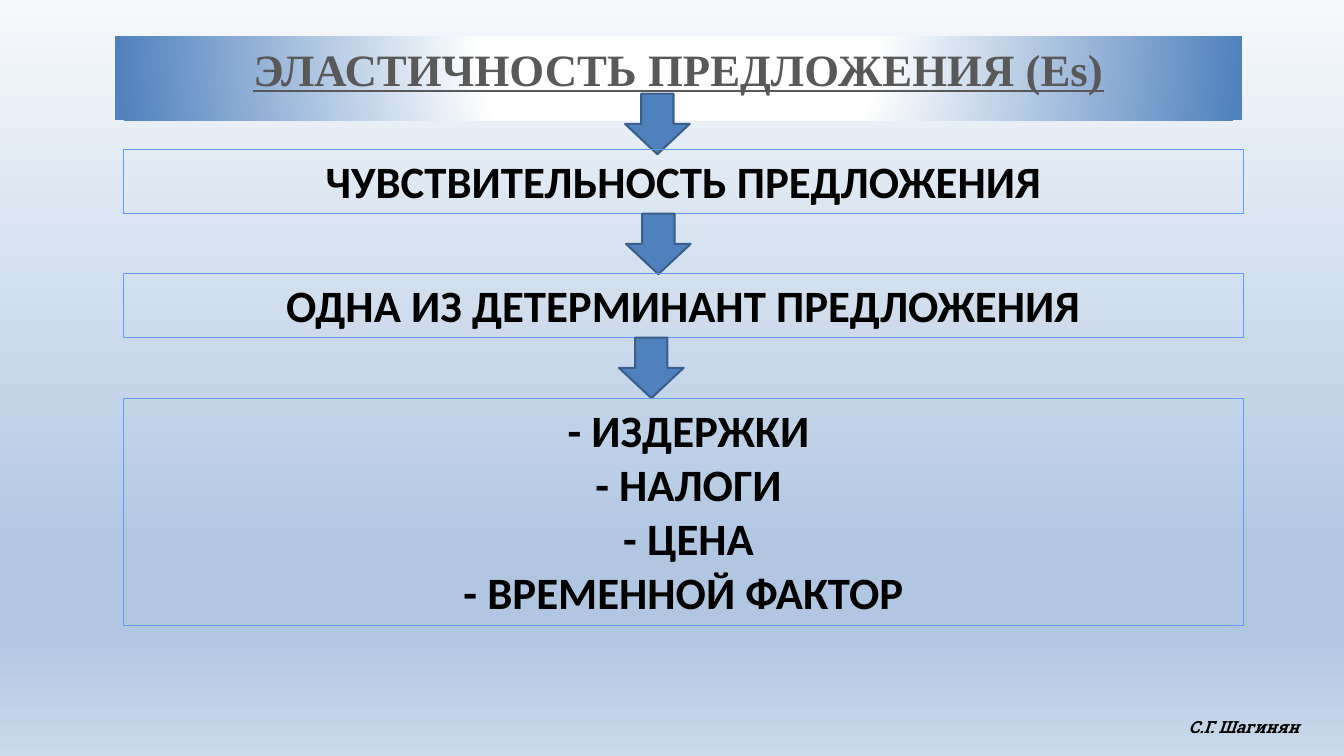
from lxml.etree import SubElement
from pptx import Presentation
from pptx.dml.color import RGBColor
from pptx.enum.shapes import MSO_SHAPE as Shape
from pptx.enum.text import MSO_ANCHOR as Anchor, MSO_AUTO_SIZE as AutoSize, PP_ALIGN as Align
from pptx.oxml.ns import qn
from pptx.util import Inches, Pt

BLACK = RGBColor(0x00, 0x00, 0x00)
GRAY = RGBColor(0x59, 0x59, 0x59)
WHITE = RGBColor(0xFF, 0xFF, 0xFF)
BLUE = RGBColor(0x4F, 0x81, 0xBD)
DARK_BLUE = RGBColor(0x3A, 0x5F, 0x8C)
BORDER_BLUE = RGBColor(0x66, 0x99, 0xFF)
SKY_TOP = RGBColor(0xF6, 0xF9, 0xFC)
SKY_MIDDLE = RGBColor(0xB0, 0xC6, 0xE1)
SKY_BOTTOM = RGBColor(0xCA, 0xD9, 0xEB)

BOX_LEFT, BOX_WIDTH = 1.23, 11.1
ARROW_WIDTH, ARROW_HEIGHT = 0.64, 0.6

# Each step: arrow left, arrow top, box top, box height, lines
STEPS = [
    (6.2, 0.93, 1.48, 0.64, ["ЧУВСТВИТЕЛЬНОСТЬ ПРЕДЛОЖЕНИЯ"]),
    (6.21, 2.12, 2.71, 0.64, ["ОДНА ИЗ ДЕТЕРМИНАНТ ПРЕДЛОЖЕНИЯ"]),
    (6.14, 3.35, 3.95, 2.26,
     [" - ИЗДЕРЖКИ", " - НАЛОГИ", " - ЦЕНА", "- ВРЕМЕННОЙ ФАКТОР"]),
]


def set_gradient(fill, parent, stops, focus=None):
    """Fill with (percent, colour) stops: top to bottom, or circular around focus (l, t, r, b)."""
    fill.gradient()
    gradient = parent.find(qn("a:gradFill"))
    for child in list(gradient):
        gradient.remove(child)
    stop_list = SubElement(gradient, qn("a:gsLst"))
    for percent, color in stops:
        stop = SubElement(stop_list, qn("a:gs"), pos=str(percent * 1000))
        SubElement(stop, qn("a:srgbClr"), val=str(color))
    if focus is None:
        SubElement(gradient, qn("a:lin"), ang=str(90 * 60000), scaled="0")
    else:
        circle = SubElement(gradient, qn("a:path"), path="circle")
        edges = {side: str(percent * 1000) for side, percent in zip("ltrb", focus)}
        SubElement(circle, qn("a:fillToRect"), **edges)


class SlideBuilder:
    font_name = "Calibri"
    font_size = 32

    def __init__(self, presentation):
        self.slide = presentation.slides.add_slide(presentation.slide_layouts[5])

    def background(self, stops):
        fill = self.slide.background.fill
        set_gradient(fill, self.slide.element.find(".//" + qn("p:bgPr")), stops)

    def set_text(self, shape, lines, color=BLACK, name=None, size=None, align=Align.CENTER,
                 wrap=True, underline=None, italic=None):
        frame = shape.text_frame
        frame.text = "\n".join(lines)
        frame.word_wrap = wrap
        frame.auto_size = AutoSize.SHAPE_TO_FIT_TEXT
        frame.vertical_anchor = Anchor.TOP
        for paragraph in frame.paragraphs:
            paragraph.alignment = align
            font = paragraph.font
            font.name = name or self.font_name
            font.size = Pt(size or self.font_size)
            font.bold = True
            font.italic = italic
            font.underline = underline
            font.color.rgb = color

    def title(self, text, left, top, width, height):
        title = self.slide.shapes.title
        title.left, title.top = Inches(left), Inches(top)
        title.width, title.height = Inches(width), Inches(height)
        set_gradient(title.fill, title.element.spPr,
                     [(0, WHITE), (35, WHITE), (100, BLUE)], focus=(50, -80, 50, 180))
        self.set_text(title, [text], color=GRAY, name="Times New Roman", underline=True)

    def shape(self, kind, left, top, width, height, line_color, line_width):
        shape = self.slide.shapes.add_shape(
            kind, Inches(left), Inches(top), Inches(width), Inches(height))
        shape.shadow.inherit = False
        shape.line.color.rgb = line_color
        shape.line.width = Pt(line_width)
        return shape

    def arrow(self, left, top):
        arrow = self.shape(Shape.DOWN_ARROW, left, top, ARROW_WIDTH, ARROW_HEIGHT, DARK_BLUE, 1.5)
        arrow.fill.solid()
        arrow.fill.fore_color.rgb = BLUE

    def box(self, top, height, lines):
        box = self.shape(Shape.RECTANGLE, BOX_LEFT, top, BOX_WIDTH, height, BORDER_BLUE, 0.75)
        box.fill.background()
        self.set_text(box, lines)

    def signature(self, text, left, top, width, height):
        label = self.slide.shapes.add_textbox(
            Inches(left), Inches(top), Inches(width), Inches(height))
        self.set_text(label, [text], name="Roboto Slab", size=12, align=Align.LEFT,
                      wrap=False, italic=True)


def main():
    presentation = Presentation()
    presentation.slide_width, presentation.slide_height = Inches(13.33), Inches(7.5)
    builder = SlideBuilder(presentation)
    builder.background([(0, SKY_TOP), (74, SKY_MIDDLE), (83, SKY_MIDDLE), (100, SKY_BOTTOM)])
    builder.title("ЭЛАСТИЧНОСТЬ ПРЕДЛОЖЕНИЯ (Es)", 1.14, 0.36, 11.18, 0.64)
    for arrow_left, arrow_top, box_top, box_height, lines in STEPS:
        builder.arrow(arrow_left, arrow_top)
        builder.box(box_top, box_height, lines)
    builder.signature("С.Г. Шагинян", 11.69, 7.06, 1.44, 0.3)
    presentation.save("out.pptx")


if __name__ == "__main__":
    main()
